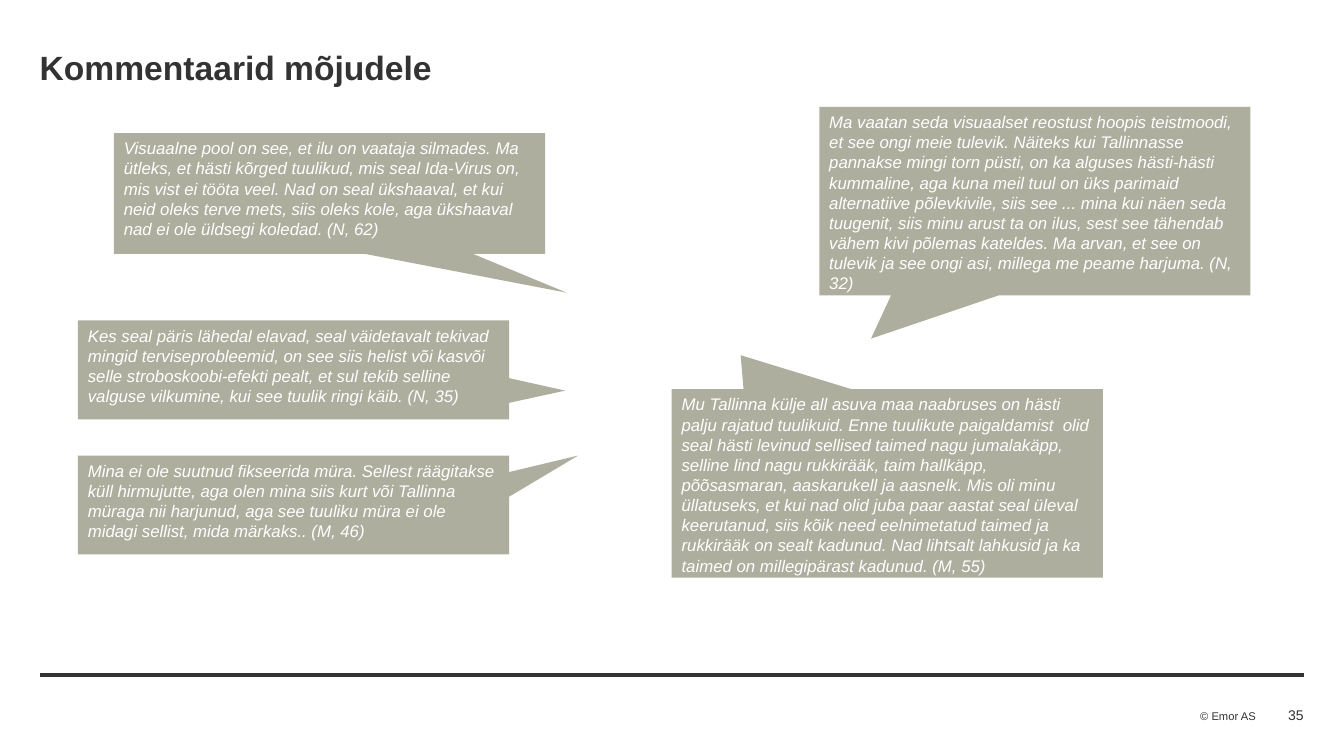
from dataclasses import dataclass

from lxml import etree
from pptx import Presentation
from pptx.dml.color import RGBColor
from pptx.enum.shapes import MSO_CONNECTOR, MSO_SHAPE
from pptx.enum.text import MSO_ANCHOR, PP_ALIGN
from pptx.oxml.ns import qn
from pptx.util import Inches, Pt

CALLOUT = MSO_SHAPE.RECTANGULAR_CALLOUT
STRAIGHT = MSO_CONNECTOR.STRAIGHT
TOP, MIDDLE = MSO_ANCHOR.TOP, MSO_ANCHOR.MIDDLE
LEFT, RIGHT = PP_ALIGN.LEFT, PP_ALIGN.RIGHT

WIDTH, HEIGHT = Inches(13.33), Inches(7.5)
TITLE_ONLY = 5


@dataclass(frozen=True)
class Theme:
    font: str = "Arial"
    ink: RGBColor = RGBColor(0x33, 0x33, 0x33)
    bubble: RGBColor = RGBColor(0xAE, 0xAE, 0x9F)
    bubble_text: RGBColor = RGBColor(0xFF, 0xFF, 0xFF)
    title_size: int = 24
    quote_size: int = 12
    number_size: int = 10
    copyright_size: int = 8
    rule_width: int = 3


THEME = Theme()

MARGIN = 2.95
RULE_TOP = 89.25
QUOTE_WIDTH = 32.08
LEFT_COLUMN = 5.8
SHORT, MEDIUM, TALL = 13.07, 16, 24.93

QUOTES = [
    (8.48, 17.6, MEDIUM, (0.55, 0.82),
     "Visuaalne pool on see, et ilu on vaataja silmades. Ma ütleks, et hästi "
     "kõrged tuulikud, mis seal Ida-Virus on, mis vist ei tööta veel. Nad on "
     "seal ükshaaval, et kui neid oleks terve mets, siis oleks kole, aga "
     "ükshaaval nad ei ole üldsegi koledad. (N, 62)"),
    (60.96, 14.13, TALL, (-0.38, 0.73),
     "Ma vaatan seda visuaalset reostust hoopis teistmoodi, et see ongi meie "
     "tulevik. Näiteks kui Tallinnasse pannakse mingi torn püsti, on ka alguses "
     "hästi-hästi kummaline, aga kuna meil tuul on üks parimaid alternatiive "
     "põlevkivile, siis see ... mina kui näen seda tuugenit, siis minu arust ta "
     "on ilus, sest see tähendab vähem kivi põlemas kateldes. Ma arvan, et see "
     "on tulevik ja see ongi asi, millega me peame harjuma. (N, 32)"),
    (LEFT_COLUMN, 42.4, SHORT, (0.63, 0.21),
     "Kes seal päris lähedal elavad, seal väidetavalt tekivad mingid "
     "terviseprobleemid, on see siis helist või kasvõi selle stroboskoobi-efekti "
     "pealt, et sul tekib selline valguse vilkumine, kui see tuulik ringi käib. "
     "(N, 35)"),
    (49.98, 51.47, TALL, (-0.34, -0.68),
     "Mu Tallinna külje all asuva maa naabruses on hästi palju rajatud "
     "tuulikuid. Enne tuulikute paigaldamist  olid seal hästi levinud sellised "
     "taimed nagu jumalakäpp, selline lind nagu rukkirääk, taim hallkäpp, "
     "põõsasmaran, aaskarukell ja aasnelk. Mis oli minu üllatuseks, et kui nad "
     "olid juba paar aastat seal üleval keerutanud, siis kõik need eelnimetatud "
     "taimed ja rukkirääk on sealt kadunud. Nad lihtsalt lahkusid ja ka taimed "
     "on millegipärast kadunud. (M, 55)"),
    (LEFT_COLUMN, 60.27, SHORT, (0.66, -0.5),
     "Mina ei ole suutnud fikseerida müra. Sellest räägitakse küll hirmujutte, "
     "aga olen mina siis kurt või Tallinna müraga nii harjunud, aga see tuuliku "
     "müra ei ole midagi sellist, mida märkaks.. (M, 46)"),
]


def across(percent):
    return round(WIDTH * percent / 100)


def down(percent):
    return round(HEIGHT * percent / 100)


def area(left, top, width, height):
    return across(left), down(top), across(width), down(height)


def write(shape, text, size, color, align=LEFT, anchor=TOP, bold=False,
          italic=False, wrap=True):
    frame = shape.text_frame
    frame.text = text
    frame.word_wrap = wrap
    frame.vertical_anchor = anchor
    paragraph = frame.paragraphs[0]
    paragraph.alignment = align
    paragraph.space_before = Pt(0)
    paragraph.line_spacing = 1.0
    font = paragraph.font
    font.name, font.size = THEME.font, Pt(size)
    font.bold, font.italic = bold, italic
    font.color.rgb = color
    return frame


def clear_margins(frame):
    frame.margin_left = frame.margin_right = 0
    frame.margin_top = frame.margin_bottom = 0


def add_title(slide, text):
    title = slide.shapes.title
    title.left, title.top, title.width, title.height = area(
        MARGIN, 6.27, 100 - 2 * MARGIN, 5.87)
    clear_margins(write(title, text, THEME.title_size, THEME.ink, bold=True))


def add_rule(slide):
    rule = slide.shapes.add_connector(
        STRAIGHT, across(MARGIN), down(RULE_TOP),
        across(100 - MARGIN), down(RULE_TOP))
    rule.line.color.rgb = THEME.ink
    rule.line.width = Pt(THEME.rule_width)
    etree.SubElement(rule.element.spPr, qn("a:effectLst"))


def add_label(slide, box, text, size, **layout):
    label = slide.shapes.add_textbox(*area(*box))
    clear_margins(write(label, text, size, THEME.ink, **layout))


def add_quote(slide, left, top, height, tip, text):
    bubble = slide.shapes.add_shape(CALLOUT, *area(left, top, QUOTE_WIDTH, height))
    bubble.shadow.inherit = False
    bubble.fill.solid()
    bubble.fill.fore_color.rgb = THEME.bubble
    bubble.line.fill.background()
    bubble.adjustments[0], bubble.adjustments[1] = tip
    write(bubble, text, THEME.quote_size, THEME.bubble_text, italic=True)


def main():
    presentation = Presentation()
    presentation.slide_width, presentation.slide_height = WIDTH, HEIGHT
    slide = presentation.slides.add_slide(presentation.slide_layouts[TITLE_ONLY])
    add_rule(slide)
    add_label(slide, (89.3, 93.87, 4.2, 1.73), "© Emor AS",
              THEME.copyright_size, wrap=False)
    add_title(slide, "Kommentaarid mõjudele")
    add_label(slide, (89.05, 93.1, 7.95, 2.93), "35", THEME.number_size,
              align=RIGHT, anchor=MIDDLE)
    for quote in QUOTES:
        add_quote(slide, *quote)
    presentation.save("out.pptx")


if __name__ == "__main__":
    main()
